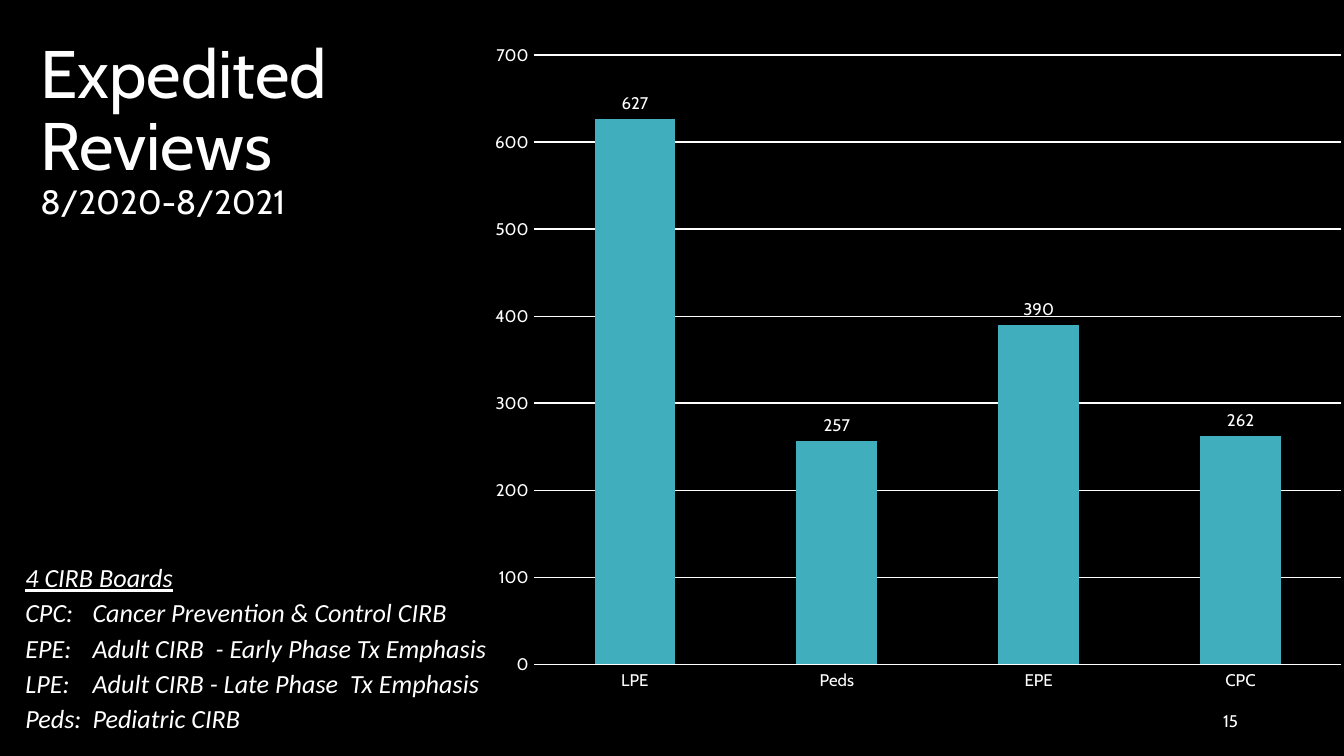
from lxml.etree import SubElement
from pptx import Presentation
from pptx.chart.data import CategoryChartData
from pptx.dml.color import RGBColor
from pptx.enum.chart import XL_CHART_TYPE, XL_LABEL_POSITION, XL_TICK_MARK
from pptx.enum.text import MSO_ANCHOR, MSO_AUTO_SIZE, PP_ALIGN
from pptx.oxml import parse_xml
from pptx.oxml.ns import nsdecls, qn
from pptx.util import Inches, Pt

COLORS = {"background": "000000", "text": "FFFFFF", "bar": "41AEBD"}
REVIEWS = {"LPE": 627, "Peds": 257, "EPE": 390, "CPC": 262}
BOARDS = {
    "CPC:": "Cancer Prevention & Control CIRB",
    "EPE:": "Adult CIRB  - Early Phase Tx Emphasis",
    "LPE:": "Adult CIRB - Late Phase  Tx Emphasis",
    "Peds:": "Pediatric CIRB",
}
PLOT_LAYOUT = {"x": 0.063, "y": 0.042, "w": 0.916, "h": 0.905}


def color(name):
    return RGBColor.from_string(COLORS[name])


def format_font(font, size, name="Cabin", **options):
    for key, value in {"size": Pt(size), "name": name, **options}.items():
        setattr(font, key, value)
    font.color.rgb = color("text")


def place(shape, left, top, width, height):
    box = {"left": left, "top": top, "width": width, "height": height}
    for key, value in box.items():
        setattr(shape, key, Inches(value))


def add_text_box(slide, *box):
    frame = slide.shapes.add_textbox(*map(Inches, box)).text_frame
    frame.word_wrap = True
    return frame


def add_title(slide):
    title = slide.shapes.title
    place(title, 0.2, 0.25, 2.68, 3.9)
    frame = title.text_frame
    frame.auto_size = MSO_AUTO_SIZE.NONE
    frame.vertical_anchor = MSO_ANCHOR.TOP
    heading = frame.paragraphs[0]
    heading.alignment = PP_ALIGN.LEFT
    heading.line_spacing = 0.9
    name = heading.add_run()
    name.text = "Expedited Reviews"
    format_font(name.font, 36)
    heading.add_line_break()
    period = heading.add_run()
    period.text = "8/2020-8/2021"
    format_font(period.font, 18)


def set_plot_layout(chart):
    """Fix the inner plot area as fractions of the chart."""
    plot_area = chart.element.find(".//" + qn("c:plotArea"))
    for old_layout in plot_area.findall(qn("c:layout")):
        plot_area.remove(old_layout)
    layout = parse_xml(f"<c:layout {nsdecls('c')}><c:manualLayout/></c:layout>")
    settings = {"layoutTarget": "inner", "xMode": "edge", "yMode": "edge", **PLOT_LAYOUT}
    for tag, value in settings.items():
        SubElement(layout[0], qn(f"c:{tag}")).set("val", str(value))
    plot_area.insert(0, layout)


def format_line(line):
    line.color.rgb = color("text")
    line.width = Pt(0.75)


def add_reviews_chart(slide):
    data = CategoryChartData()
    data.categories = list(REVIEWS)
    data.add_series("Series 1", list(REVIEWS.values()))
    box = map(Inches, (3.56, 0.2, 6.56, 5.01))
    chart = slide.shapes.add_chart(XL_CHART_TYPE.COLUMN_CLUSTERED, *box, data).chart
    chart.has_legend = False
    chart.has_title = False
    format_font(chart.font, 10)
    set_plot_layout(chart)

    boards, counts = chart.category_axis, chart.value_axis
    for axis in (boards, counts):
        axis.major_tick_mark = axis.minor_tick_mark = XL_TICK_MARK.NONE
        format_font(axis.tick_labels.font, 9)
    format_line(boards.format.line)
    counts.format.line.fill.background()
    for key, value in {"minimum_scale": 0, "maximum_scale": 700, "major_unit": 100}.items():
        setattr(counts, key, value)
    format_line(counts.major_gridlines.format.line)

    plot = chart.plots[0]
    plot.gap_width = 150
    plot.vary_by_categories = False
    bars = plot.series[0]
    bars.format.fill.solid()
    bars.format.fill.fore_color.rgb = color("bar")
    labels = bars.data_labels
    labels.show_value = True
    labels.position = XL_LABEL_POSITION.OUTSIDE_END
    format_font(labels.font, 9)


def add_board_key(slide):
    frame = add_text_box(slide, 0.09, 4.13, 5.05, 1.39)
    lines = ["4 CIRB Boards"] + [f"{code}\t{board}" for code, board in BOARDS.items()]
    for index, line in enumerate(lines):
        entry = frame.paragraphs[0] if index == 0 else frame.add_paragraph()
        entry.text = line
        entry.space_after = Pt(2)
        tabs = SubElement(entry._p.get_or_add_pPr(), qn("a:tabLst"))
        SubElement(tabs, qn("a:tab"), pos=str(Inches(0.5)), algn="l")
        format_font(entry.runs[0].font, 14, "Calibri", italic=True, underline=index == 0)


def add_page_number(slide):
    frame = add_text_box(slide, 7.06, 5.21, 2.25, 0.3)
    frame.vertical_anchor = MSO_ANCHOR.MIDDLE
    number = frame.paragraphs[0]
    number.text = "15"
    number.alignment = PP_ALIGN.RIGHT
    number.space_after = Pt(6)
    format_font(number.runs[0].font, 9)


def main():
    deck = Presentation()
    deck.slide_width = Inches(10)
    deck.slide_height = deck.slide_width * 9 // 16
    slide = deck.slides.add_slide(deck.slide_layouts[5])
    slide.background.fill.solid()
    slide.background.fill.fore_color.rgb = color("background")
    add_title(slide)
    add_page_number(slide)
    add_reviews_chart(slide)
    add_board_key(slide)
    deck.save("out.pptx")


if __name__ == "__main__":
    main()
